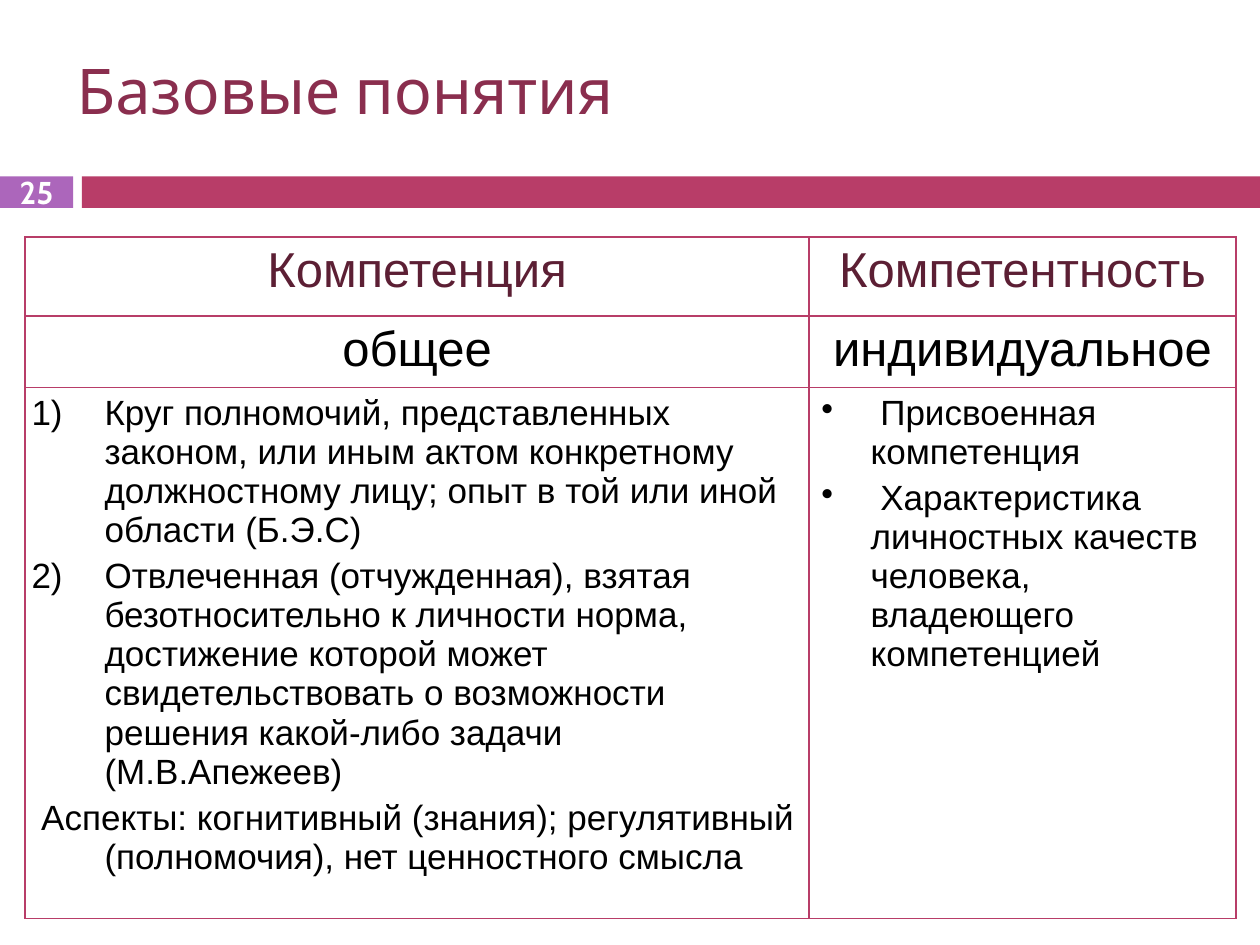
import pptx
import pptx.dml.color
import pptx.enum.shapes
import pptx.enum.text
import pptx.oxml
import pptx.oxml.ns
import pptx.util
from pptx.util import Inches

RGBColor = pptx.dml.color.RGBColor
PURPLE = RGBColor(0xAC, 0x66, 0xBB)
CRIMSON = RGBColor(0xB8, 0x3D, 0x68)
TITLE_RED = RGBColor(0x8A, 0x2E, 0x4E)
HEADING_RED = RGBColor(0x5C, 0x1F, 0x34)
BLACK = RGBColor(0, 0, 0)
WHITE = RGBColor(0xFF, 0xFF, 0xFF)
CENTER = pptx.enum.text.PP_ALIGN.CENTER
NS = pptx.oxml.ns.nsdecls("a")


def style(paragraph, name, size, color, bold=False):
    font = paragraph.font
    font.name, font.size, font.bold = name, pptx.util.Pt(size), bold
    font.color.rgb = color


def add_label(text, left, top, width, height):
    frame = slide.shapes.add_textbox(
        Inches(left), Inches(top), Inches(width), Inches(height)).text_frame
    frame.word_wrap = True
    frame.vertical_anchor = pptx.enum.text.MSO_ANCHOR.MIDDLE
    frame.text = text
    return frame


deck = pptx.Presentation()
deck.slide_width, deck.slide_height = Inches(10), Inches(7.5)
slide = deck.slides.add_slide(deck.slide_layouts[6])

# Band under the title
for left, width, color in [(0, 0.58, PURPLE), (0.65, 9.35, CRIMSON)]:
    band = slide.shapes.add_shape(
        pptx.enum.shapes.MSO_SHAPE.RECTANGLE,
        Inches(left), Inches(1.4), Inches(width), Inches(0.25))
    band.shadow.inherit = False
    band.fill.solid()
    band.fill.fore_color.rgb = color
    band.line.fill.background()

# Title
title = add_label("Базовые понятия", 0.51, 0.26, 9, 0.89)
style(title.paragraphs[0], "Cabin", 36, TITLE_RED)

# Comparison table: each paragraph is (text, bullet)
NUMBER = '<a:buAutoNum %s type="arabicParenR"/>' % NS
DOT = '<a:buChar %s char="•"/>' % NS
PLAIN = '<a:buNone %s/>' % NS
rows = [
    [[("Компетенция", PLAIN)], [("Компетентность", PLAIN)]],
    [[("общее", PLAIN)], [("индивидуальное", PLAIN)]],
    [[("Круг полномочий, представленных законом, или иным актом конкретному "
       "должностному лицу; опыт в той или иной области (Б.Э.С)", NUMBER),
      ("Отвлеченная (отчужденная), взятая безотносительно к личности норма, "
       "достижение которой может свидетельствовать о возможности решения "
       "какой-либо задачи (М.В.Апежеев)", NUMBER),
      (" Аспекты: когнитивный (знания); регулятивный (полномочия), "
       "нет ценностного смысла", PLAIN)],
     [(" Присвоенная компетенция", DOT),
      (" Характеристика личностных качеств человека, владеющего компетенцией",
       DOT)]],
]
row_styles = [(28, HEADING_RED), (28, BLACK), (20, BLACK)]
indents = [0.58, 0.39]

comparison = slide.shapes.add_table(
    3, 2, Inches(0.2), Inches(1.88), Inches(9.61), Inches(4.76)).table
comparison.first_row = comparison.horz_banding = False
for column, width in zip(comparison.columns, [6.22, 3.39]):
    column.width = Inches(width)
for row, height in zip(comparison.rows, [0.63, 0.55, 3.58]):
    row.height = Inches(height)

for r, (row, (size, color)) in enumerate(zip(rows, row_styles)):
    for c, entries in enumerate(row):
        cell = comparison.cell(r, c)
        if r == 2 and c == 0:
            cell.margin_left = cell.margin_right = Inches(0.05)
        properties = cell._tc.get_or_add_tcPr()
        for side in "LRTB":
            properties.append(pptx.oxml.parse_xml(
                f'<a:ln{side} {NS} w="12700"><a:solidFill>'
                f'<a:srgbClr val="{CRIMSON}"/></a:solidFill></a:ln{side}>'))
        cell.fill.background()
        cell.text = "\n".join(text for text, bullet in entries)
        for paragraph, (text, bullet) in zip(cell.text_frame.paragraphs, entries):
            # Space before is 20% of the text size
            paragraph.space_before = pptx.util.Pt(size * 0.2)
            layout = paragraph._p.get_or_add_pPr()
            if r < 2:
                paragraph.alignment = CENTER
            else:
                layout.set("marL", str(Inches(indents[c])))
                layout.set("indent", str(-Inches(indents[c])))
            layout.append(pptx.oxml.parse_xml(bullet))
            style(paragraph, "Arial", size, color)

# Slide number
number = add_label("25", 0, 1.39, 0.58, 0.27)
number.margin_top = number.margin_bottom = 0
number.paragraphs[0].alignment = CENTER
style(number.paragraphs[0], "Cabin", 18, WHITE, bold=True)

deck.save("out.pptx")
